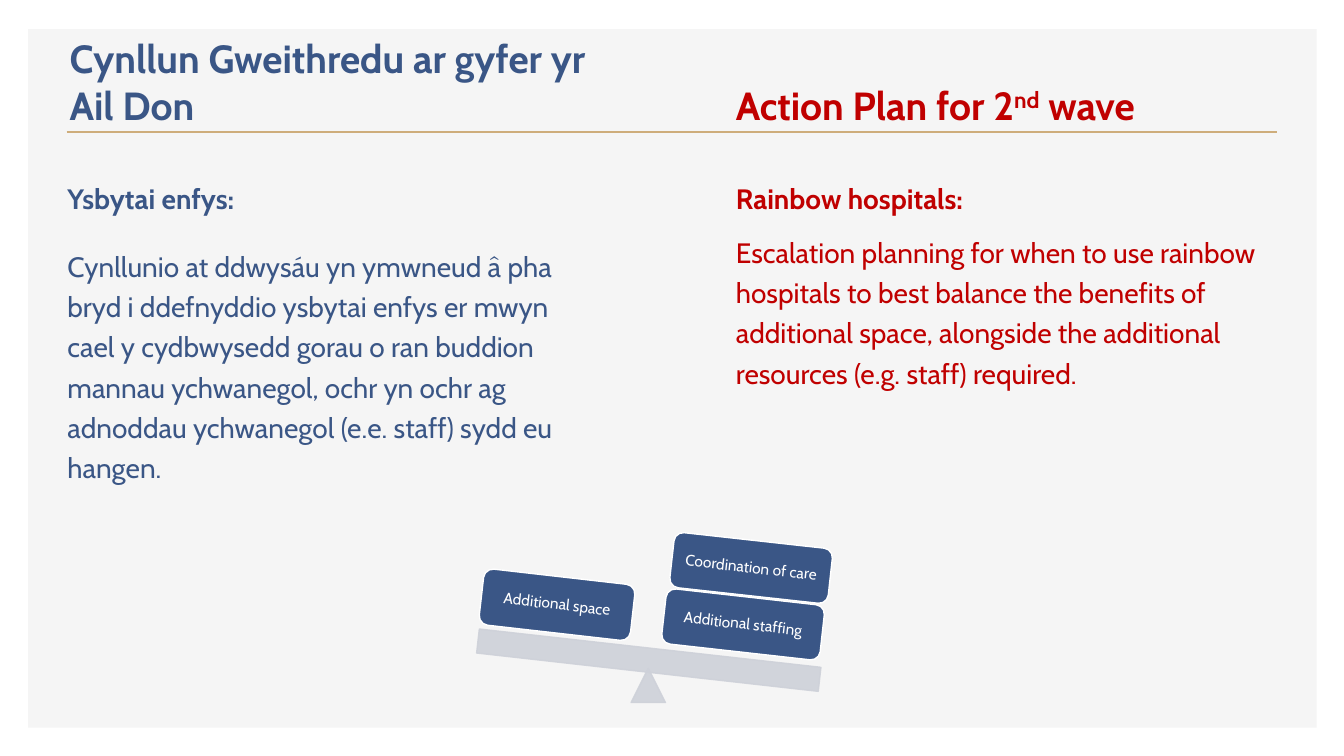
from dataclasses import dataclass

import pptx
import pptx.dml.color
import pptx.enum.shapes
import pptx.enum.text
import pptx.oxml.ns
import pptx.oxml.xmlchemy
import pptx.util
from pptx.util import Inches

SHAPE = pptx.enum.shapes.MSO_SHAPE
ANCHOR = pptx.enum.text.MSO_ANCHOR
ALIGN = pptx.enum.text.PP_ALIGN


@dataclass(frozen=True)
class Theme:
    font: str = "Cabin"
    panel: str = "F5F5F5"
    rule: str = "CEAD7B"
    welsh: str = "3A5686"
    english: str = "C00000"
    scale: str = "CED1D9"
    white: str = "FFFFFF"
    title_size: int = 28
    body_size: int = 20
    label_size: int = 11


@dataclass(frozen=True)
class Box:
    left: float
    top: float
    width: float
    height: float

    def emu(self) -> tuple:
        return tuple(Inches(v) for v in (self.left, self.top, self.width, self.height))


@dataclass(frozen=True)
class Column:
    title: tuple[str, ...]
    title_box: Box
    heading: str
    body: str
    body_box: Box
    body_gap: int
    color: str


@dataclass(frozen=True)
class Weight:
    text: str
    box: Box
    angle: float


THEME = Theme()

COLUMNS = (
    Column(
        ("Cynllun Gweithredu ar gyfer yr Ail Don",),
        Box(0.59, 0.62, 5.43, 0.7),
        "Ysbytai enfys:",
        "Cynllunio at ddwysáu yn ymwneud â pha bryd i ddefnyddio ysbytai enfys "
        "er mwyn cael y cydbwysedd gorau o ran buddion mannau ychwanegol, ochr yn "
        "ochr ag adnoddau ychwanegol (e.e. staff) sydd eu hangen.",
        Box(0.57, 1.68, 5.45, 5.09),
        10,
        THEME.welsh,
    ),
    Column(
        ("Action Plan for 2", "nd", " wave"),
        Box(7.2, 0.62, 5.35, 0.7),
        "Rainbow hospitals:",
        "Escalation planning for when to use rainbow hospitals to best balance "
        "the benefits of additional space, alongside the additional resources "
        "(e.g. staff) required.",
        Box(7.2, 1.68, 5.45, 5.09),
        0,
        THEME.english,
    ),
)

WEIGHTS = (
    Weight("Additional staffing", Box(6.58, 5.92, 1.58, 0.55), 6.4),
    Weight("Coordination of care", Box(6.66, 5.36, 1.58, 0.55), 6.3),
    Weight("Additional space", Box(4.77, 5.72, 1.51, 0.56), 6.5),
)


def rgb(color: str) -> pptx.dml.color.RGBColor:
    return pptx.dml.color.RGBColor.from_string(color)


def set_font(font, size: int, color: str, bold: bool = False) -> None:
    font.name = THEME.font
    font.size = pptx.util.Pt(size)
    font.bold = bold
    font.color.rgb = rgb(color)


def add_filled(slide, kind, box: Box, fill: str, line: str | None = None, angle: float = 0):
    sp = slide.shapes.add_shape(kind, *box.emu())
    sp.shadow.inherit = False
    sp.rotation = angle
    sp.fill.solid()
    sp.fill.fore_color.rgb = rgb(fill)
    if line:
        sp.line.color.rgb = rgb(line)
        sp.line.width = pptx.util.Pt(1)
    else:
        sp.line.fill.background()
    return sp


def add_scale_part(slide, kind, box: Box, angle: float = 0) -> None:
    sp = add_filled(slide, kind, box, THEME.scale, THEME.scale, angle)
    for clr in sp._element.spPr.iter(pptx.oxml.ns.qn("a:srgbClr")):
        alpha = pptx.oxml.xmlchemy.OxmlElement("a:alpha")
        alpha.set("val", "90000")
        clr.append(alpha)


def add_rule(slide) -> None:
    y = Inches(1.31)
    cxn = slide.shapes.add_connector(
        pptx.enum.shapes.MSO_CONNECTOR.STRAIGHT, Inches(0.66), y, Inches(12.67), y
    )
    cxn.line.color.rgb = rgb(THEME.rule)
    cxn.line.width = pptx.util.Pt(2)
    cxn._element.spPr.append(pptx.oxml.xmlchemy.OxmlElement("a:effectLst"))


def fill_title(sp, column: Column) -> None:
    sp.left, sp.top, sp.width, sp.height = column.title_box.emu()
    tf = sp.text_frame
    tf.word_wrap = True
    tf.auto_size = pptx.enum.text.MSO_AUTO_SIZE.NONE
    tf.vertical_anchor = ANCHOR.BOTTOM
    p = tf.paragraphs[0]
    p.alignment = ALIGN.LEFT
    for part in column.title:
        r = p.add_run()
        r.text = part
        set_font(r.font, THEME.title_size, column.color, True)
        if part == "nd":
            r._r.get_or_add_rPr().set("baseline", "30000")


def add_body(slide, column: Column) -> None:
    tf = slide.shapes.add_textbox(*column.body_box.emu()).text_frame
    tf.word_wrap = True
    heading, body = tf.paragraphs[0], tf.add_paragraph()
    heading.text, body.text = column.heading, column.body
    heading.space_after = pptx.util.Pt(10)
    body.space_before = pptx.util.Pt(column.body_gap)
    for p in (heading, body):
        p.line_spacing = 1.2
        set_font(p.runs[0].font, THEME.body_size, column.color, p is heading)


def add_weight(slide, weight: Weight) -> None:
    sp = add_filled(
        slide, SHAPE.ROUNDED_RECTANGLE, weight.box, THEME.welsh, THEME.white, weight.angle
    )
    tf = sp.text_frame
    tf.word_wrap = True
    tf.vertical_anchor = ANCHOR.MIDDLE
    tf.margin_left = tf.margin_right = tf.margin_top = tf.margin_bottom = Inches(0.05)
    p = tf.paragraphs[0]
    p.text = weight.text
    p.alignment = ALIGN.CENTER
    p.line_spacing = 0.9
    set_font(p.runs[0].font, THEME.label_size, THEME.white)


def main() -> None:
    prs = pptx.Presentation()
    prs.slide_width, prs.slide_height = Inches(13.33), Inches(7.5)
    s = prs.slides.add_slide(prs.slide_layouts[5])
    panel = add_filled(s, SHAPE.RECTANGLE, Box(0.28, 0.29, 12.78, 6.93), THEME.panel)
    s.shapes._spTree.remove(panel._element)
    s.shapes._spTree.insert(2, panel._element)
    add_rule(s)

    welsh, english = COLUMNS
    fill_title(s.shapes.title, welsh)
    fill_title(s.shapes.add_textbox(*english.title_box.emu()), english)
    for column in COLUMNS:
        add_body(s, column)

    add_scale_part(s, SHAPE.ISOSCELES_TRIANGLE, Box(6.26, 6.63, 0.34, 0.34))
    add_scale_part(s, SHAPE.RECTANGLE, Box(4.73, 6.43, 3.41, 0.24), 6.4)
    for weight in WEIGHTS:
        add_weight(s, weight)
    prs.save("out.pptx")


if __name__ == "__main__":
    main()
